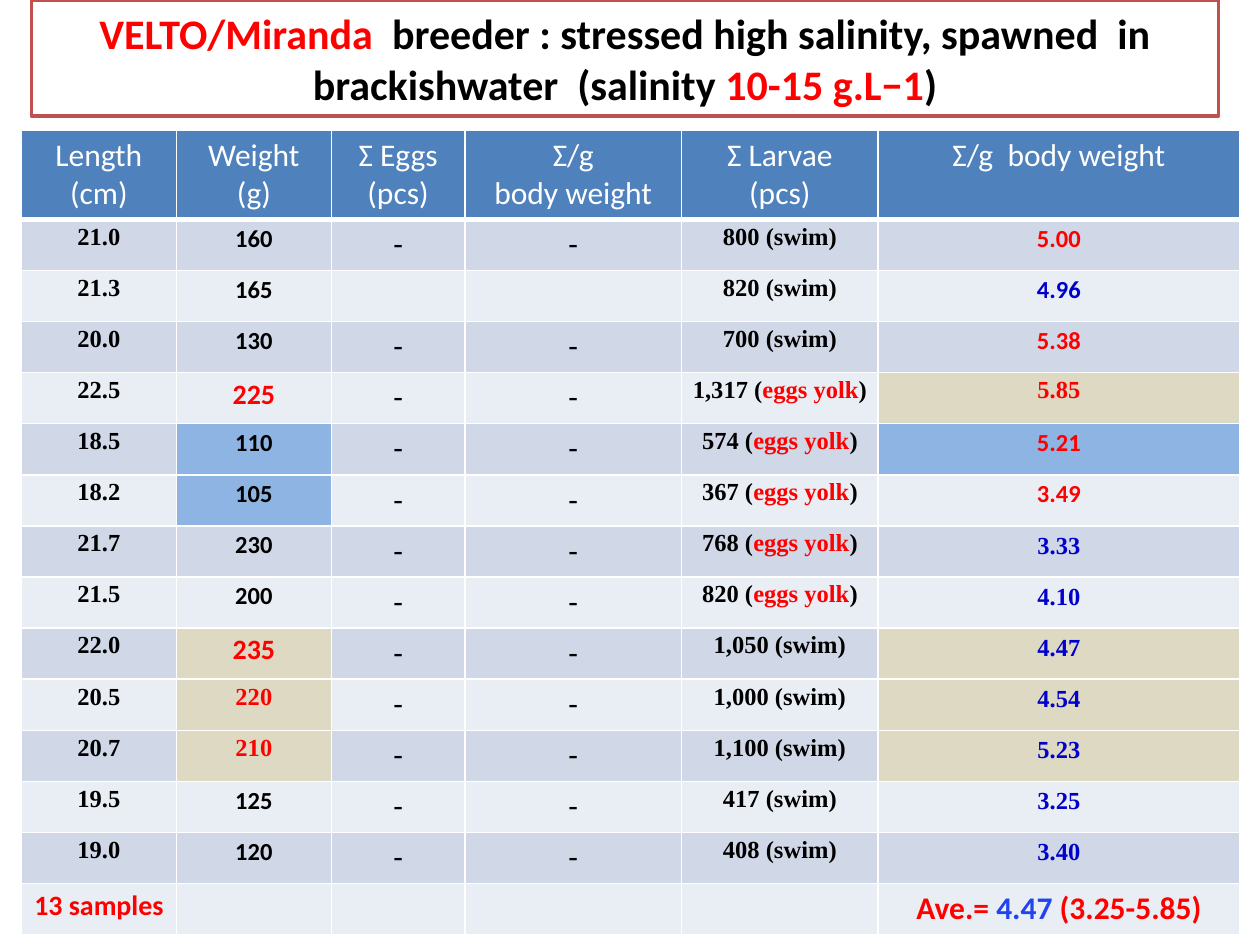
from lxml.etree import SubElement
from pptx import Presentation
from pptx.dml.color import RGBColor
from pptx.enum.shapes import MSO_SHAPE
from pptx.enum.text import MSO_ANCHOR, PP_ALIGN
from pptx.oxml.ns import qn
from pptx.util import Inches, Pt

BLACK, WHITE, RED, BLUE = "000000", "FFFFFF", "FF0000", "0000CC"
HEADER, SAND, SKY = "4F81BD", "DDD9C3", "8EB4E3"
BANDS = ["E9EDF4", "D0D8E8"]
SANS, SERIF = "Calibri", "Times New Roman"
COLUMN_WIDTHS = [1.23, 1.23, 1.06, 1.72, 1.56, 2.87]
HEADER_HEIGHT = 0.7
TIGHT = {"margin_left": Inches(0.07), "margin_right": Inches(0.07),
         "margin_top": 0, "margin_bottom": 0}
SMALL = {"name": SANS, "size": Pt(14), "bold": True}
SMALL_SERIF = {**SMALL, "name": SERIF}
MEDIUM = {**SMALL, "size": Pt(16)}
LARGE = {**SMALL, "size": Pt(18)}
PLAIN = {**LARGE, "bold": False}
TITLE = {**SMALL, "size": Pt(24)}

HEADINGS = [
    ["Length", "(cm)"], ["Weight", "(g)"], ["Ʃ Eggs", "(pcs)"],
    ["Ʃ/g", "body weight"], ["Ʃ Larvae", "(pcs)"], ["Ʃ/g  body weight"],
]
SWIM, YOLK = "swim", "eggs yolk"
SAMPLES = [
    ("21.0", "160", "-", "800", SWIM, "5.00"),
    ("21.3", "165", "", "820", SWIM, "4.96"),
    ("20.0", "130", "-", "700", SWIM, "5.38"),
    ("22.5", "225", "-", "1,317", YOLK, "5.85"),
    ("18.5", "110", "-", "574", YOLK, "5.21"),
    ("18.2", "105", "-", "367", YOLK, "3.49"),
    ("21.7", "230", "-", "768", YOLK, "3.33"),
    ("21.5", "200", "-", "820", YOLK, "4.10"),
    ("22.0", "235", "-", "1,050", SWIM, "4.47"),
    ("20.5", "220", "-", "1,000", SWIM, "4.54"),
    ("20.7", "210", "-", "1,100", SWIM, "5.23"),
    ("19.5", "125", "-", "417", SWIM, "3.25"),
    ("19.0", "120", "-", "408", SWIM, "3.40"),
]
WEIGHT_STYLES = {"225": (MEDIUM, RED), "235": (MEDIUM, RED),
                 "220": (SMALL_SERIF, RED), "210": (SMALL_SERIF, RED)}
RED_RATIOS = {"5.00", "5.38", "5.85", "5.21", "3.49"}
FIRST_LOOSE_RATIO = 7
HIGHLIGHTS = {(4, 5): SAND, (5, 1): SKY, (5, 5): SKY, (6, 1): SKY,
              **{(row, column): SAND for row in (9, 10, 11) for column in (1, 5)}}


def color(value):
    """Turn a hex string into a colour."""
    return RGBColor.from_string(value)


def apply_format(target, values):
    """Set each named attribute on the target."""
    for name, value in values.items():
        setattr(target, name, value)


def write(frame, lines, style, spacing=None):
    """Write centred lines, each a list of (text, colour) spans."""
    for index, spans in enumerate(lines):
        para = frame.add_paragraph() if index else frame.paragraphs[0]
        para.alignment = PP_ALIGN.CENTER
        if spacing:
            para.line_spacing = spacing
        for text, shade in spans:
            span = para.add_run()
            span.text = text
            apply_format(span.font, style)
            span.font.color.rgb = color(shade)


def add_borders(cell, bottom):
    """Give a cell white borders, with the bottom width in points."""
    properties = cell._tc.get_or_add_tcPr()
    widths = {"a:lnL": 1, "a:lnR": 1, "a:lnT": 1, "a:lnB": bottom}
    for index, (tag, width) in enumerate(widths.items()):
        line = SubElement(properties, qn(tag), w=str(Pt(width)))
        fill = SubElement(line, qn("a:solidFill"))
        SubElement(fill, qn("a:srgbClr"), val=WHITE)
        properties.remove(line)
        properties.insert(index, line)


def fill_cell(cell, lines, style, fill, tight=False, bottom=1):
    """Fill one table cell with its text, colour and borders."""
    cell.fill.solid()
    cell.fill.fore_color.rgb = color(fill)
    add_borders(cell, bottom)
    if tight:
        apply_format(cell, TIGHT)
    write(cell.text_frame, lines, style, 1.15 if tight else None)


def sample_cells(row, sample):
    """Return the (spans, style, tight) of each cell in a sample row."""
    length, weight, eggs, larvae, stage, ratio = sample
    weight_style, weight_color = WEIGHT_STYLES.get(weight, (SMALL, BLACK))
    loose = row >= FIRST_LOOSE_RATIO
    ratio_style = SMALL_SERIF if loose or ratio == "5.85" else SMALL
    dash = ([(eggs, BLACK)] if eggs else [], PLAIN, False)
    if stage == YOLK:
        larvae_spans = [(f"{larvae} (", BLACK), (stage, RED), (")", BLACK)]
    else:
        larvae_spans = [(f"{larvae} ({stage})", BLACK)]
    return [
        ([(length, BLACK)], SMALL_SERIF, True),
        ([(weight, weight_color)], weight_style, True),
        dash,
        dash,
        (larvae_spans, SMALL_SERIF, True),
        ([(ratio, RED if ratio in RED_RATIOS else BLUE)], ratio_style, not loose),
    ]


def summary_cells():
    """Return the (spans, style, tight) of each cell in the last row."""
    average = [("Ave.= ", RED), ("4.47", "2244F0"), (" (3.25-5.85)", RED)]
    return [([("13 samples", RED)], MEDIUM, True),
            *[([], PLAIN, False)] * 4,
            (average, LARGE, False)]


def add_title(page, left, top, width, height):
    """Place the framed title in the given box."""
    box = page.shapes.add_shape(MSO_SHAPE.RECTANGLE, Inches(left), Inches(top),
                                Inches(width), Inches(height))
    box.shadow.inherit = False
    box.fill.solid()
    box.fill.fore_color.rgb = color(WHITE)
    box.line.color.rgb = color("C0504D")
    box.line.width = Pt(2)
    apply_format(box.text_frame,
                 {"word_wrap": True, "vertical_anchor": MSO_ANCHOR.MIDDLE})
    write(box.text_frame, [[
        ("VELTO/Miranda ", RED),
        (" breeder : stressed high salinity, spawned  in brackishwater  (salinity ", BLACK),
        ("10-15 g.L−1", RED),
        (")", BLACK),
    ]], TITLE)


def add_sample_table(page, left, top, width, height):
    """Place the table of spawning samples in the given box."""
    body = [sample_cells(row, sample) for row, sample in enumerate(SAMPLES, 1)]
    body.append(summary_cells())
    table = page.shapes.add_table(len(body) + 1, len(COLUMN_WIDTHS), Inches(left),
                                  Inches(top), Inches(width), Inches(height)).table
    apply_format(table, {"first_row": False, "horz_banding": False})
    for column, column_width in zip(table.columns, COLUMN_WIDTHS):
        column.width = Inches(column_width)
    for row in table.rows:
        row.height = Inches((height - HEADER_HEIGHT) / len(body))
    table.rows[0].height = Inches(HEADER_HEIGHT)
    for column, heading in enumerate(HEADINGS):
        lines = [[(line, WHITE)] for line in heading]
        fill_cell(table.cell(0, column), lines, PLAIN, HEADER, bottom=3)
    for row, cells in enumerate(body, 1):
        for column, (spans, style, tight) in enumerate(cells):
            fill = HIGHLIGHTS.get((row, column), BANDS[row % 2])
            fill_cell(table.cell(row, column), [spans], style, fill, tight)


def main():
    """Build the slide and save the deck."""
    deck = Presentation()
    apply_format(deck, {"slide_width": Inches(10), "slide_height": Inches(7.5)})
    page = deck.slides.add_slide(deck.slide_layouts[6])
    add_title(page, 0.25, 0, 9.42, 0.92)
    add_sample_table(page, 0.17, 1.03, 9.67, 6.38)
    deck.save("out.pptx")


if __name__ == "__main__":
    main()
